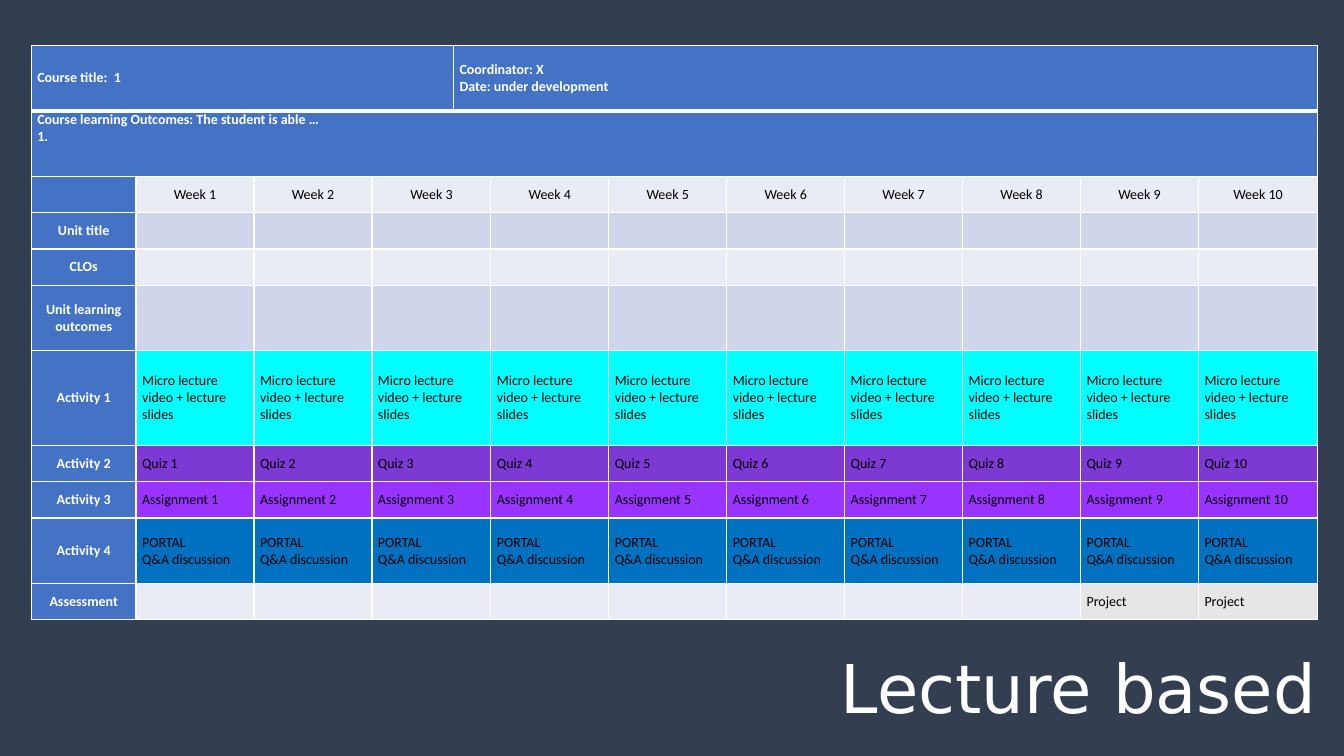
from lxml.etree import SubElement
from pptx import Presentation
from pptx.dml.color import RGBColor
from pptx.enum.text import MSO_ANCHOR as Anchor, MSO_AUTO_SIZE as AutoSize, PP_ALIGN as Align
from pptx.oxml.ns import qn
from pptx.util import Inches, Pt

BLUE, PALE, MID = "4472C4", "E9EBF5", "CFD5EA"
WHITE, BLACK, GREY = "FFFFFF", "000000", "E7E6E6"
COLUMNS = [1.04, 1.17, 1.17, 0.81, 0.37] + [1.17] * 6 + [1.18]
ROWS = [0.65, 0.65, 0.36, 0.36, 0.36, 0.65, 0.94, 0.36, 0.36, 0.65, 0.36]
WEEK_COLUMNS = [1, 2, 3, 5, 6, 7, 8, 9, 10, 11]
PLAN = [
    ("", "Week {}", PALE),
    ("Unit title", "", MID),
    ("CLOs", "", PALE),
    ("Unit learning outcomes", "", MID),
    ("Activity 1", "Micro lecture video + lecture slides", "00FFFF"),
    ("Activity 2", "Quiz {}", "7D39D3"),
    ("Activity 3", "Assignment {}", "9933FF"),
    ("Activity 4", "PORTAL\nQ&A discussion", "0070C0"),
    ("Assessment", "", PALE),
]


def color(code):
    return RGBColor.from_string(code)


class CourseSlide:
    """Holds the style and the slide, and adds its title, table and cells."""

    def __init__(self, deck):
        self.table_font, self.title_font = "Calibri", "DejaVu Sans"
        self.slide = deck.slides.add_slide(deck.slide_layouts[5])
        background = self.slide.background.fill
        background.solid()
        background.fore_color.rgb = color("333F50")

    def style(self, paragraph, name, size, shade, bold=False, align=Align.LEFT):
        font = paragraph.font
        font.name, font.size, font.bold = name, Pt(size), bold
        font.color.rgb = color(shade)
        paragraph.alignment = align

    def title(self, text, left, top, width, height):
        title = self.slide.shapes.title
        title.left, title.top = Inches(left), Inches(top)
        title.width, title.height = Inches(width), Inches(height)
        frame = title.text_frame
        frame.text = text
        frame.auto_size, frame.vertical_anchor = AutoSize.NONE, Anchor.MIDDLE
        self.style(frame.paragraphs[0], self.title_font, 48, WHITE)
        frame.paragraphs[0].line_spacing = 0.9

    def table(self, left, top, columns, rows):
        frame = self.slide.shapes.add_table(
            len(rows), len(columns), Inches(left), Inches(top),
            Inches(sum(columns)), Inches(sum(rows)))
        table = frame.table
        table.first_row = table.horz_banding = False
        properties = table._tbl.tblPr
        properties.remove(properties.find(qn("a:tableStyleId")))
        for column, width in zip(table.columns, columns):
            column.width = Inches(width)
        for row, height in zip(table.rows, rows):
            row.height = Inches(height)
        for row_number in range(len(rows)):
            for cell in table.rows[row_number].cells:
                self.borders(cell, row_number)
        return table

    def borders(self, cell, row_number):
        heavy_side = {0: "lnB", 1: "lnT"}.get(row_number)
        for side in ("lnL", "lnR", "lnT", "lnB"):
            width = Pt(3 if side == heavy_side else 1)
            line = SubElement(cell._tc.get_or_add_tcPr(), qn(f"a:{side}"), w=str(width))
            fill = SubElement(line, qn("a:solidFill"))
            SubElement(fill, qn("a:srgbClr"), val=WHITE)

    def cell(self, cell, text, fill, shade=BLACK, bold=False,
             align=Align.LEFT, anchor=Anchor.MIDDLE):
        cell.fill.solid()
        cell.fill.fore_color.rgb = color(fill)
        cell.margin_left = cell.margin_right = Inches(0.06)
        cell.margin_top = cell.margin_bottom = 0
        cell.vertical_anchor = anchor
        cell.text_frame.text = text
        for paragraph in cell.text_frame.paragraphs:
            self.style(paragraph, self.table_font, 10, shade, bold, align)

    def number(self, paragraph):
        properties = paragraph._p.get_or_add_pPr()
        properties.set("marL", str(Inches(0.25)))
        properties.set("indent", str(-Inches(0.25)))
        bullet = SubElement(properties, qn("a:buAutoNum"), type="arabicPeriod")
        properties.find(qn("a:defRPr")).addprevious(bullet)


def main():
    deck = Presentation()
    deck.slide_width, deck.slide_height = Inches(13.33), Inches(7.5)
    course = CourseSlide(deck)
    course.title("Lecture based", 8.24, 6.43, 5.59, 0.87)
    schedule = course.table(0.31, 0.45, COLUMNS, ROWS)

    headers = [
        (0, 0, 3, "Course title:  1", Anchor.MIDDLE),
        (0, 4, 11, "Coordinator: X\nDate: under development", Anchor.MIDDLE),
        (1, 0, 11, "Course learning Outcomes: The student is able …\n ", Anchor.TOP),
    ]
    for row, first, last, text, anchor in headers:
        header = schedule.cell(row, first)
        header.merge(schedule.cell(row, last))
        course.cell(header, text, BLUE, WHITE, bold=True, anchor=anchor)
    course.number(schedule.cell(1, 0).text_frame.paragraphs[1])

    for row, (label, entry, fill) in enumerate(PLAN, start=2):
        course.cell(schedule.cell(row, 0), label, BLUE, WHITE, True, Align.CENTER)
        schedule.cell(row, 3).merge(schedule.cell(row, 4))
        align = Align.CENTER if row == 2 else Align.LEFT
        for week, column in enumerate(WEEK_COLUMNS, start=1):
            course.cell(schedule.cell(row, column), entry.format(week), fill, align=align)
    for column in WEEK_COLUMNS[-2:]:
        course.cell(schedule.cell(len(ROWS) - 1, column), "Project", GREY)

    deck.save("out.pptx")


if __name__ == "__main__":
    main()
